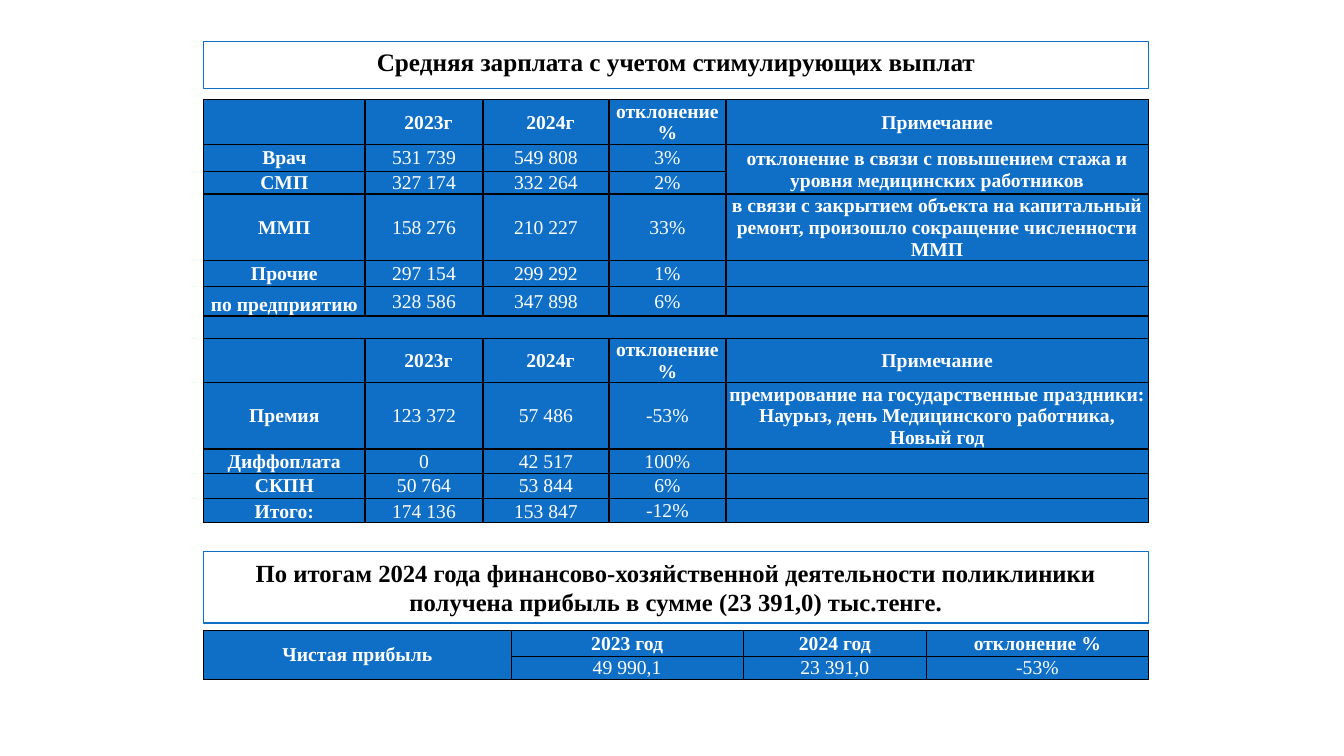
from lxml import etree
from pptx import Presentation
from pptx.dml.color import RGBColor
from pptx.enum.shapes import MSO_SHAPE
from pptx.enum.text import MSO_ANCHOR, PP_ALIGN
from pptx.oxml import parse_xml
from pptx.oxml.ns import qn
from pptx.util import Inches, Pt

RECTANGLE = MSO_SHAPE.RECTANGLE
TOP, MIDDLE, BOTTOM = MSO_ANCHOR.TOP, MSO_ANCHOR.MIDDLE, MSO_ANCHOR.BOTTOM
CENTER = PP_ALIGN.CENTER
DRAWING = "http://schemas.openxmlformats.org/drawingml/2006/main"
BLUE, WHITE, BLACK = "0F6FC6", "FFFFFF", "000000"
LEFT, WIDTH = 2.02, 9.37


def color(value):
    return RGBColor.from_string(value)


def write(frame, text, size, bold, ink):
    paragraph = frame.paragraphs[0]
    paragraph.alignment = CENTER
    if not text:
        end = etree.SubElement(paragraph._p, qn("a:endParaRPr"))
        end.set("sz", "1200")
        return
    run = paragraph.add_run()
    run.text = text
    run.font.name = "Times New Roman"
    run.font.size = Pt(size)
    run.font.bold = bold
    run.font.color.rgb = color(ink)


presentation = Presentation()
presentation.slide_width = Inches(13.33)
presentation.slide_height = Inches(7.5)
slide = presentation.slides.add_slide(presentation.slide_layouts[6])

headings = [
    (0.41, 0.47, 18, TOP, "Средняя зарплата с учетом стимулирующих выплат"),
    (5.47, 0.71, 17.6, MIDDLE,
     "По итогам 2024 года финансово-хозяйственной деятельности поликлиники "
     "получена прибыль в сумме (23 391,0) тыс.тенге."),
]
for top, height, size, anchor, text in headings:
    shape = slide.shapes.add_shape(
        RECTANGLE, Inches(LEFT), Inches(top), Inches(WIDTH), Inches(height))
    shape.shadow.inherit = False
    shape.fill.solid()
    shape.fill.fore_color.rgb = color(WHITE)
    shape.line.color.rgb = color(BLUE)
    shape.line.width = Pt(1)
    shape.text_frame.word_wrap = True
    shape.text_frame.vertical_anchor = anchor
    write(shape.text_frame, text, size, True, BLACK)

header = ["", "2023г", "2024г", "отклонение %", "Примечание"]
salary_rows = [
    header,
    ["Врач", "531 739", "549 808", "3%",
     "отклонение в связи с повышением стажа и уровня медицинских работников"],
    ["СМП", "327 174", "332 264", "2%", ""],
    ["ММП", "158 276", "210 227", "33%",
     "в связи с закрытием объекта на капитальный ремонт, "
     "произошло сокращение численности ММП"],
    ["Прочие", "297 154", "299 292", "1%", ""],
    ["по предприятию", "328 586", "347 898", "6%", ""],
    [""] * 5,
    header,
    ["Премия", "123 372", "57 486", "-53%",
     "премирование на государственные праздники: "
     "Наурыз, день Медицинского работника, Новый год"],
    ["Диффоплата", "0", "42 517", "100%", ""],
    ["СКПН", "50 764", "53 844", "6%", ""],
    ["Итого:", "174 136", "153 847", "-12%", ""],
]
profit_rows = [
    ["Чистая прибыль", "2023 год", "2024 год", "отклонение %"],
    ["", "49 990,1", "23 391,0", "-53%"],
]
tables = [
    (0.99, salary_rows, [1.6, 1.17, 1.25, 1.16, 4.19],
     [0.44, 0.27, 0.22, 0.66, 0.26, 0.29, 0.22, 0.44, 0.66, 0.24, 0.25, 0.24],
     1, [(1, 4, 2, 4), (6, 0, 6, 4)], [(5, 0), (11, 0), (11, 1), (11, 2)]),
    (6.25, profit_rows, [3.05, 2.3, 1.82, 2.2], [0.26, 0.23],
     0.5, [(0, 0, 1, 0)], []),
]
for top, rows, widths, heights, border, merges, bottom_cells in tables:
    table = slide.shapes.add_table(
        len(rows), len(widths), Inches(LEFT), Inches(top),
        Inches(WIDTH), Inches(sum(heights))).table
    table.horz_banding = False
    table.first_row = False
    for column, width in zip(table.columns, widths):
        column.width = Inches(width)
    for row, height in zip(table.rows, heights):
        row.height = Inches(height)
    for row_index, values in enumerate(rows):
        for column_index, text in enumerate(values):
            cell = table.cell(row_index, column_index)
            cell.margin_left = Inches(0.1 if text in header[1:3] else 0.01)
            cell.margin_right = cell.margin_top = Inches(0.01)
            cell.margin_bottom = 0
            low = (row_index, column_index) in bottom_cells
            cell.vertical_anchor = BOTTOM if low else MIDDLE
            bold = (column_index in (0, 4) or values is header
                    or values is profit_rows[0])
            write(cell.text_frame, text, 14, bold, WHITE)
            cell.fill.solid()
            cell.fill.fore_color.rgb = color(BLUE)
            properties = cell._tc.get_or_add_tcPr()
            for position, side in enumerate(("lnL", "lnR", "lnT", "lnB")):
                properties.insert(position, parse_xml(
                    f'<a:{side} xmlns:a="{DRAWING}" w="{Pt(border)}"><a:solidFill>'
                    f'<a:srgbClr val="{BLACK}"/></a:solidFill></a:{side}>'))
    for first_row, first_column, last_row, last_column in merges:
        table.cell(first_row, first_column).merge(
            table.cell(last_row, last_column))

presentation.save("out.pptx")
